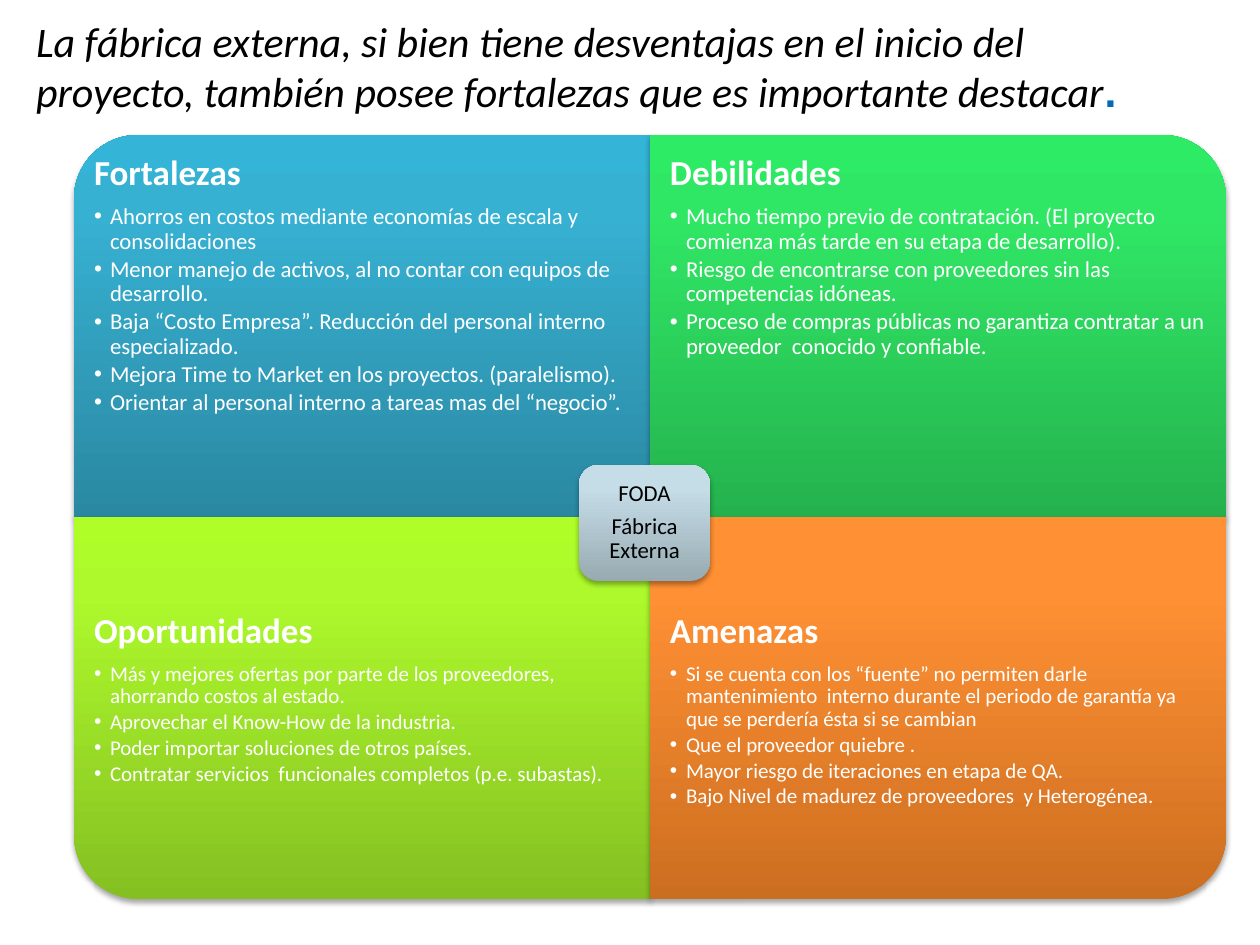
from lxml import etree
from pptx import Presentation
from pptx import util as u
from pptx.dml.color import RGBColor
from pptx.enum import shapes, text
from pptx.oxml.ns import qn

SCALE = 914400 / 126
LEFT, TOP, WIDE, HIGH = 74, 135, 576, 382
LIST_H = 286
FONT = "Calibri"

# heading, column, row, rotation, gradient from bottom to top, item size, items
PANELS = [
    ("Fortalezas", 0, 0, 270, ("2A88A2", "37B1D2", "34B4D6"), 13, [
        "Ahorros en costos mediante economías de escala y consolidaciones",
        "Menor manejo de activos, al no contar con equipos de  desarrollo.",
        "Baja “Costo Empresa”. Reducción del personal interno especializado.",
        "Mejora Time to Market en los proyectos. (paralelismo).",
        "Orientar al personal interno a tareas mas del “negocio”."]),
    ("Debilidades", 1, 0, 0, ("25B24E", "30E765", "2DEB64"), 13, [
        "Mucho tiempo previo de contratación. (El proyecto comienza más tarde "
        "en su etapa de desarrollo).",
        "Riesgo de encontrarse con proveedores sin las competencias idóneas.",
        "Proceso de compras públicas no garantiza contratar a un proveedor  "
        "conocido y confiable."]),
    ("Oportunidades", 0, 1, 180, ("85C022", "ADF92C", "AFFE28"), 12, [
        "Más y mejores ofertas por parte de los proveedores, ahorrando costos "
        "al estado.",
        "Aprovechar el Know-How de la industria.",
        "Poder importar soluciones de otros países.",
        "Contratar servicios  funcionales completos (p.e. subastas)."]),
    ("Amenazas", 1, 1, 90, ("CC6E20", "FF9034", "FF9136"), 12, [
        "Si se cuenta con los “fuente” no permiten darle mantenimiento  interno "
        "durante el periodo de garantía ya que se perdería ésta si se cambian",
        "Que el proveedor quiebre .",
        "Mayor riesgo de iteraciones en etapa de QA.",
        "Bajo Nivel de madurez de proveedores  y Heterogénea."]),
]


def px(n):
    return u.Emu(round(n * SCALE))


def paint(font, color):
    font.color.rgb = RGBColor.from_string(color)


def place(shape, x, y, w, h):
    shape.left, shape.top, shape.width, shape.height = map(px, (x, y, w, h))


def sub(node, tag, **attrs):
    return etree.SubElement(node, qn(tag), attrs)


def shade(shape, colors):
    """Give an upright gradient and a soft shadow, whatever the rotation."""
    shape.line.fill.background()
    shape.fill.background()
    props = shape._element.spPr
    grad = etree.Element(qn("a:gradFill"), rotWithShape="0")
    stops = sub(grad, "a:gsLst")
    for pos, color in zip((0, 80, 100), colors):
        stop = sub(stops, "a:gs", pos=str(pos * 1000))
        sub(stop, "a:srgbClr", val=color)
    sub(grad, "a:lin", ang="16200000", scaled="0")
    props.replace(props.find(qn("a:noFill")), grad)
    shape.shadow.inherit = False
    glow = sub(props.find(qn("a:effectLst")), "a:outerShdw", blurRad="39370",
               dist="22860", dir="5400000", rotWithShape="0")
    sub(sub(glow, "a:srgbClr", val="000000"), "a:alpha", val="35000")


def block(slide, kind, x, y, w, h, colors, turn=0):
    """Add a shape that covers the given area after it is turned."""
    shape = slide.shapes.add_shape(kind, 0, 0, 0, 0)
    if turn % 180:
        x, y, w, h = x + (w - h) / 2, y + (h - w) / 2, h, w
    place(shape, x, y, w, h)
    shape.rotation = turn
    shade(shape, colors)
    return shape


def setup(frame, anchor, side, top):
    frame.word_wrap = True
    frame.auto_size = text.MSO_AUTO_SIZE.NONE
    frame.vertical_anchor = anchor
    frame.margin_left = frame.margin_right = frame.margin_bottom = px(side)
    frame.margin_top = px(top)


def style(para, size, color, after, bold=False, align=text.PP_ALIGN.LEFT):
    para.alignment = align
    para.line_spacing = 0.9
    para.space_before = u.Pt(0)
    para.space_after = u.Pt(size * after)
    font = para.font
    font.name, font.size, font.bold = FONT, u.Pt(size), bold
    paint(font, color)


def bullet(para, mark, indent):
    props = para._p.get_or_add_pPr()
    props.set("marL", str(px(indent)))
    props.set("indent", str(-px(indent) if mark else 0))
    node = etree.Element(qn("a:buChar"), char=mark) if mark else etree.Element(qn("a:buNone"))
    font = props.find(qn("a:defRPr"))
    font.addprevious(node)


def panel(slide, box, head, col, row, turn, colors, size, items):
    x, y = LEFT + col * WIDE, TOP + row * HIGH
    block(slide, shapes.MSO_SHAPE.ROUND_1_RECTANGLE, x, y, WIDE, HIGH, colors, turn)
    slide.shapes._spTree.append(box._element)  # lift the list above its panel
    place(box, x, y + row * (HIGH - LIST_H), WIDE, LIST_H)
    frame = box.text_frame
    setup(frame, text.MSO_ANCHOR.TOP, 20, 0 if row else 20)
    frame.text = "\n".join([head, *items])
    first, *rest = frame.paragraphs
    style(first, 20, "FFFFFF", 0.35, bold=True)
    bullet(first, None, 0)
    for para in rest:
        para.level = 1
        style(para, size, "FFFFFF", 0.15)
        bullet(para, "•", 16)


def center(slide):
    shape = block(slide, shapes.MSO_SHAPE.ROUNDED_RECTANGLE, 579, 465, 131, 116,
                  ("98AAB2", "C5DDE7", "C6DEE9"))
    frame = shape.text_frame
    setup(frame, text.MSO_ANCHOR.MIDDLE, 6, 6)
    frame.text = "FODA\nFábrica Externa"
    for para in frame.paragraphs:
        style(para, 13, "000000", 0.35, align=text.PP_ALIGN.CENTER)


def title(slide):
    box = slide.shapes.title
    place(box, 24, -4, 1172, 139)
    frame = box.text_frame
    setup(frame, text.MSO_ANCHOR.MIDDLE, 12, 6)
    frame.margin_bottom = px(6)
    para = frame.paragraphs[0]
    para.alignment = text.PP_ALIGN.LEFT
    for words, name, size, color, dot in (
            ("La fábrica externa, si bien tiene desventajas en el inicio del proyecto, "
             "también posee fortalezas que es importante destacar", FONT, 24, "000000", False),
            (".", "DejaVu Sans", 20, "006CB7", True)):
        run = para.add_run()
        run.text = words
        font = run.font
        font.name, font.size, font.bold, font.italic = name, u.Pt(size), dot, not dot
        paint(font, color)


def main():
    deck = Presentation()
    deck.slide_width, deck.slide_height = u.Inches(10), u.Inches(7.5)
    slide = deck.slides.add_slide(deck.slide_layouts.get_by_name("Comparison"))
    title(slide)
    boxes = [p for p in slide.placeholders if p.placeholder_format.idx in range(1, 5)]
    for box, data in zip(boxes, PANELS):
        panel(slide, box, *data)
    center(slide)
    deck.save("out.pptx")


if __name__ == "__main__":
    main()
